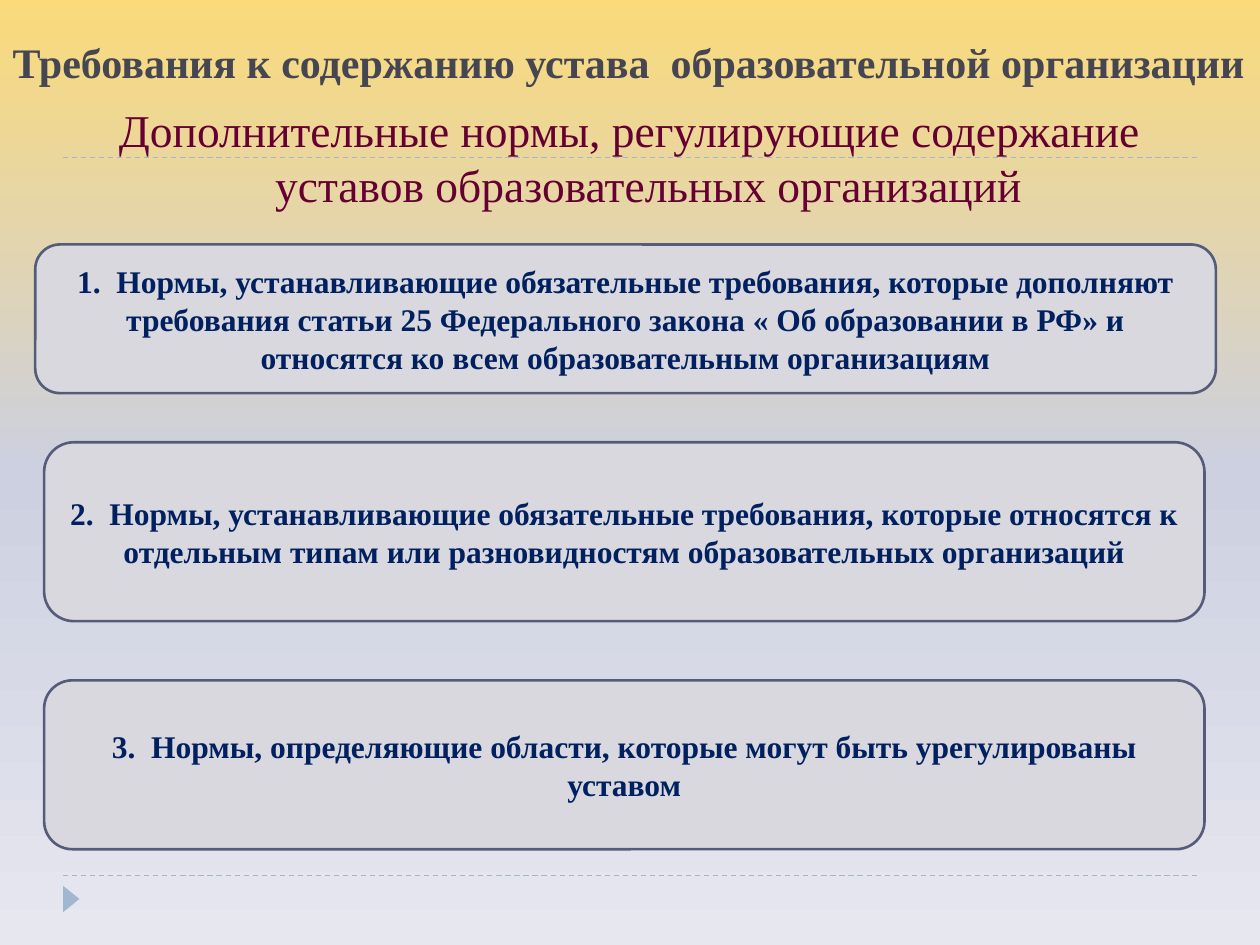
from copy import deepcopy

from lxml.etree import SubElement
from pptx import Presentation
from pptx.dml.color import RGBColor
from pptx.enum.dml import MSO_LINE
from pptx.enum.shapes import MSO_CONNECTOR, MSO_SHAPE
from pptx.enum.text import MSO_ANCHOR, MSO_AUTO_SIZE, PP_ALIGN
from pptx.oxml.ns import qn
from pptx.util import Inches, Pt

FONT = "Times New Roman"
ACCENT = "9FB8CD"
BACKGROUND_STOPS = [(0, "FADA7A"), (0.5, "CCD0E0"), (1, "E6E7EF")]
HEADING = "Требования к содержанию устава  образовательной организации"
SUBHEADING = "Дополнительные нормы, регулирующие содержание уставов образовательных организаций"
NORMS = [
    ((0.28, 1.94, 9.37, 1.18),
     "1.  Нормы, устанавливающие обязательные требования, которые дополняют требования "
     "статьи 25 Федерального закона « Об образовании в РФ» и относятся ко всем "
     "образовательным организациям"),
    ((0.35, 3.51, 9.21, 1.42),
     "2.  Нормы, устанавливающие обязательные требования, которые относятся к "
     "отдельным типам или разновидностям образовательных организаций"),
    ((0.35, 5.4, 9.21, 1.34),
     "3.  Нормы, определяющие области, которые могут быть урегулированы уставом"),
]


def color(hex_string):
    return RGBColor.from_string(hex_string)


def write(shape, text, size, hex_color, align, anchor, bold=False):
    """Fill the shape with one formatted paragraph and return it."""
    frame = shape.text_frame
    frame.text = text
    frame.word_wrap = True
    frame.auto_size = MSO_AUTO_SIZE.NONE
    frame.vertical_anchor = anchor
    paragraph = frame.paragraphs[0]
    paragraph.alignment = align
    font = paragraph.runs[0].font
    font.name, font.size, font.bold = FONT, Pt(size), bold
    font.color.rgb = color(hex_color)
    return paragraph


def place(slide, placeholder, box):
    """Position a placeholder and bring it to the front."""
    left, top, width, height = map(Inches, box)
    placeholder.left, placeholder.top = left, top
    placeholder.width, placeholder.height = width, height
    slide.shapes.element.append(placeholder.element)


def paint_background(slide):
    fill = slide.background.fill
    fill.gradient()
    fill.gradient_angle = 270
    stop_list = slide.element.find(".//" + qn("a:gsLst"))
    stop_list.append(deepcopy(stop_list[0]))
    for stop, (position, hex_color) in zip(fill.gradient_stops, BACKGROUND_STOPS):
        stop.position = position
        stop.color.rgb = color(hex_color)


def add_rule(slide, left, top, width):
    rule = slide.shapes.add_connector(
        MSO_CONNECTOR.STRAIGHT, Inches(left), Inches(top), Inches(left + width), Inches(top))
    rule.line.color.rgb = color(ACCENT)
    rule.line.width = Pt(0.75)
    rule.line.dash_style = MSO_LINE.DASH
    SubElement(rule.element.spPr, qn("a:effectLst"))


def add_page_marker(slide, box):
    marker = slide.shapes.add_shape(MSO_SHAPE.ISOSCELES_TRIANGLE, *map(Inches, box))
    marker.rotation = 90
    marker.shadow.inherit = False
    marker.fill.solid()
    marker.fill.fore_color.rgb = color(ACCENT)
    marker.line.fill.background()


def add_subheading(slide, box):
    body = slide.placeholders[1]
    place(slide, body, box)
    paragraph = write(body, SUBHEADING, 26, "660033", PP_ALIGN.CENTER, MSO_ANCHOR.TOP)
    paragraph.space_before = Pt(6)
    properties = paragraph.runs[0].font and body.element.find(".//" + qn("a:pPr"))
    properties.set("marL", str(Inches(0.3)))
    properties.set("indent", str(Inches(-0.3)))
    SubElement(properties, qn("a:buNone"))


def add_norm(slide, box, text):
    card = slide.shapes.add_shape(MSO_SHAPE.ROUNDED_RECTANGLE, *map(Inches, box))
    card.shadow.inherit = False
    card.fill.solid()
    card.fill.fore_color.rgb = color("D8D8DE")
    card.line.color.rgb = color("545C79")
    card.line.width = Pt(1.5)
    write(card, text, 18, "002060", PP_ALIGN.CENTER, MSO_ANCHOR.MIDDLE, bold=True)


def add_heading(slide, box):
    title = slide.shapes.title
    place(slide, title, box)
    write(title, HEADING, 24, "464653", PP_ALIGN.LEFT, MSO_ANCHOR.BOTTOM, bold=True)


def main():
    presentation = Presentation()
    presentation.slide_width, presentation.slide_height = Inches(10), Inches(7.5)
    slide = presentation.slides.add_slide(presentation.slide_layouts[1])
    paint_background(slide)
    for top in (6.95, 1.25):
        add_rule(slide, 0.5, top, 9)
    add_page_marker(slide, (0.46, 7.07, 0.21, 0.13))
    add_subheading(slide, (0.5, 0.76, 9, 5.98))
    for box, text in NORMS:
        add_norm(slide, box, text)
    add_heading(slide, (0, -0.34, 10, 1.08))
    presentation.save("out.pptx")


if __name__ == "__main__":
    main()
